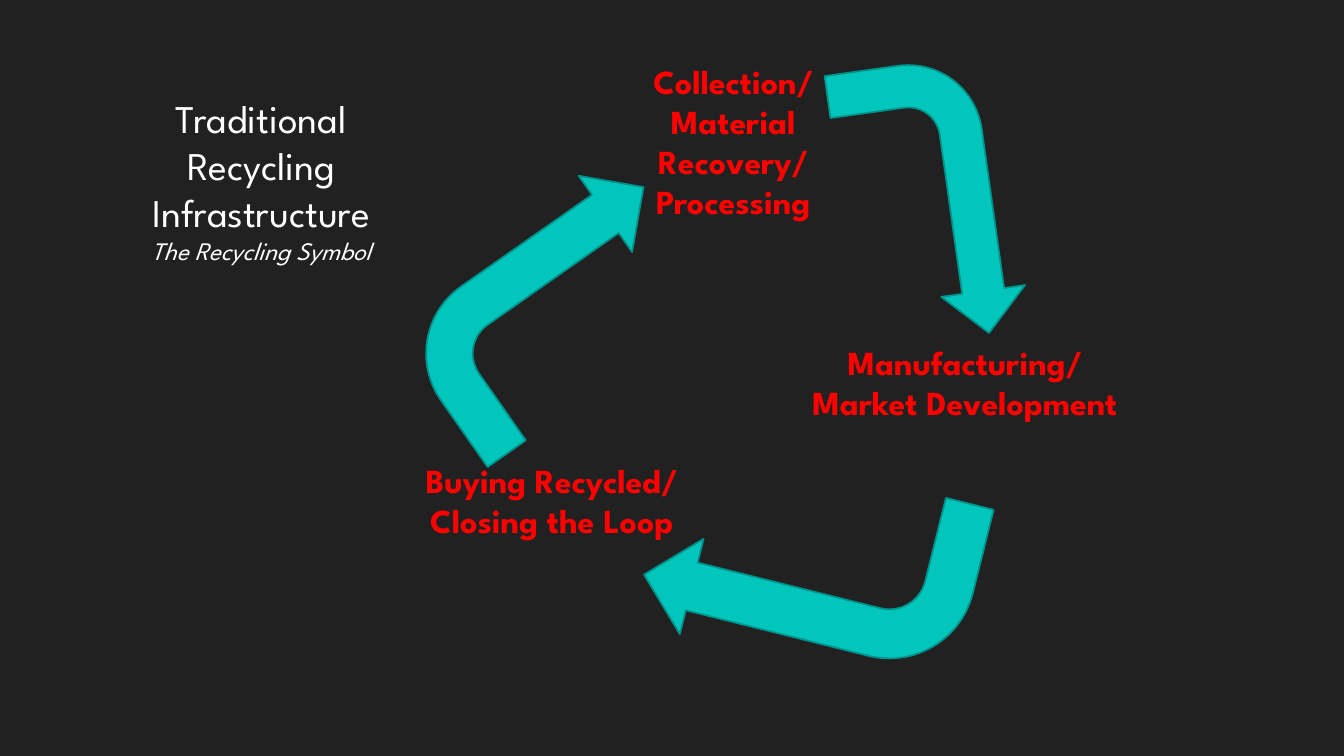
from dataclasses import dataclass

from pptx import Presentation
from pptx.dml.color import RGBColor as Rgb
from pptx.enum.shapes import MSO_SHAPE as Kind
from pptx.enum.text import MSO_ANCHOR as Anchor, MSO_AUTO_SIZE as Fit, PP_ALIGN as Align
from pptx.util import Pt


@dataclass(frozen=True)
class Theme:
    back: Rgb = Rgb(0x21, 0x21, 0x21)
    teal: Rgb = Rgb(0x00, 0xC6, 0xBB)
    edge: Rgb = Rgb(0x00, 0x92, 0x8A)
    white: Rgb = Rgb(0xFF, 0xFF, 0xFF)
    red: Rgb = Rgb(0xFF, 0x00, 0x00)
    face: str = "League Spartan"
    head: int = 28
    sub: int = 18
    label: int = 24


THEME = Theme()


def place(shape, box):
    shape.left, shape.top, shape.width, shape.height = map(Pt, box)


def write(frame, lines, color):
    """Fill a frame with centred (text, size, bold, italic) paragraphs."""
    frame.word_wrap = True
    frame.auto_size = Fit.SHAPE_TO_FIT_TEXT
    frame.vertical_anchor = Anchor.TOP
    frame.text = "\n".join(line[0] for line in lines)
    for para, (_, size, bold, italic) in zip(frame.paragraphs, lines):
        para.alignment = Align.CENTER
        font = para.font
        font.name, font.size = THEME.face, Pt(size)
        font.bold, font.italic = bold, italic
        font.color.rgb = color


def add_title(slide, box):
    title = slide.shapes.title
    place(title, box)
    write(title.text_frame, [
        ("Traditional", THEME.head, False, False),
        ("Recycling Infrastructure", THEME.head, False, False),
        ("The Recycling Symbol", THEME.sub, False, True),
    ], THEME.white)


def add_arrow(slide, box, turn):
    arrow = slide.shapes.add_shape(Kind.BENT_ARROW, *map(Pt, box))
    arrow.rotation = turn
    arrow.shadow.inherit = False
    arrow.fill.solid()
    arrow.fill.fore_color.rgb = THEME.teal
    arrow.line.color.rgb = THEME.edge
    arrow.line.width = Pt(1.25)


def add_label(slide, box, text):
    label = slide.shapes.add_textbox(*map(Pt, box))
    write(label.text_frame, [(text, THEME.label, True, False)], THEME.red)


def add_loop(slide, box):
    """Draw the three arrows and their stages, offset from the box corner."""
    left, top = box[:2]

    def shift(part):
        x, y, wide, high = part
        return left + x, top + y, wide, high

    # Arrows of the recycling symbol
    for part, turn in [
        ((16.5, 113.8, 205.9, 133.2), 325),
        ((288.7, 43.9, 198, 121), 82),
        ((190.1, 294.5, 231.1, 140.4), 194),
    ]:
        add_arrow(slide, shift(part), turn)

    # Stages between the arrows
    for part, text in [
        ((166.3, 0, 164.9, 145.4), "Collection/ Material Recovery/ Processing"),
        ((0, 285.1, 238.3, 87.1), "Buying Recycled/ Closing the Loop"),
        ((285.8, 200.9, 257, 94.3), "Manufacturing/ Market Development"),
    ]:
        add_label(slide, shift(part), text)


def main():
    deck = Presentation()
    deck.slide_width, deck.slide_height = Pt(960), Pt(540)
    slide = deck.slides.add_slide(deck.slide_layouts[5])
    slide.background.fill.solid()
    slide.background.fill.fore_color.rgb = THEME.back
    add_title(slide, (78.5, 63.4, 216, 131))
    add_loop(slide, (275, 39.6, 543, 435))
    deck.save("out.pptx")


if __name__ == "__main__":
    main()
